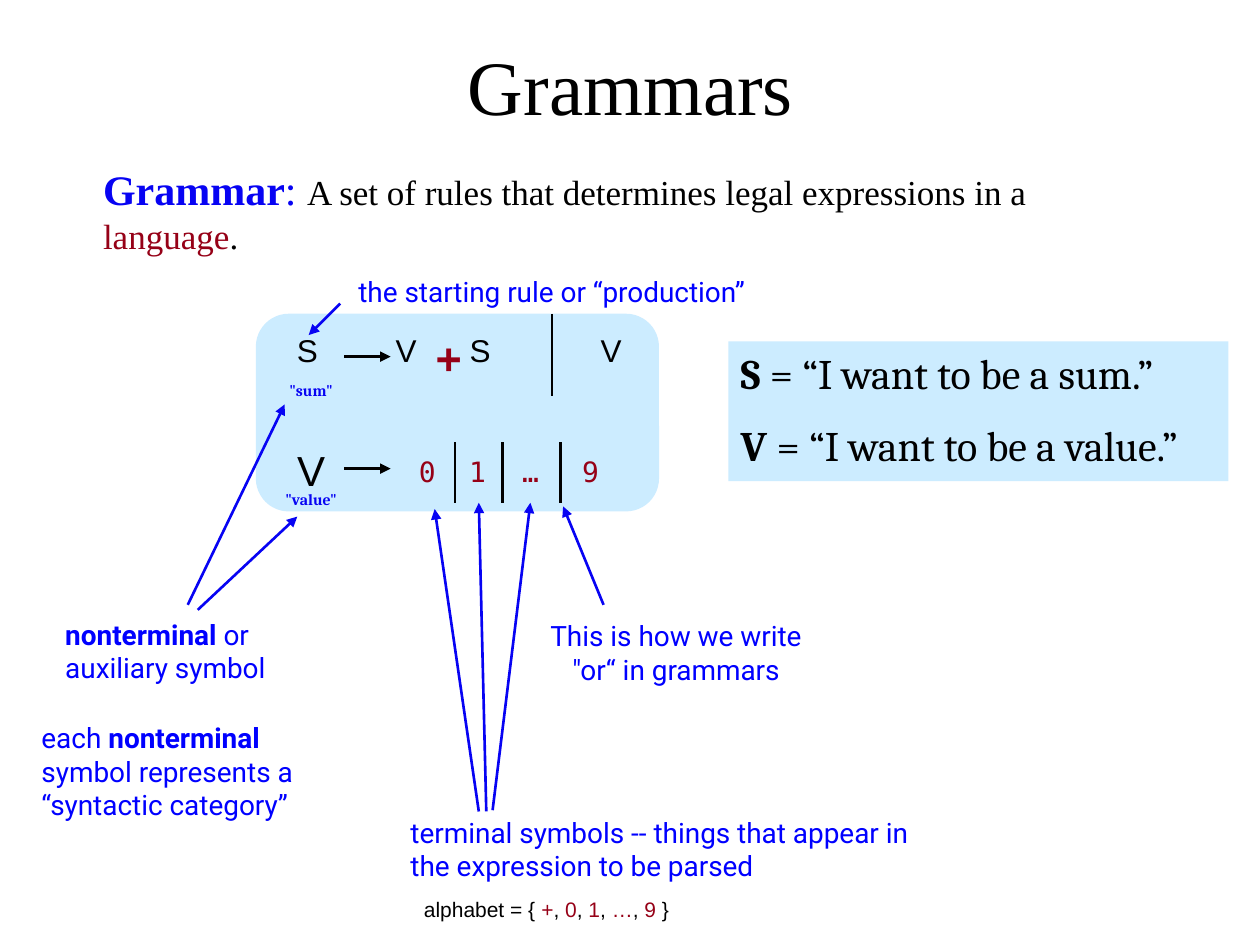
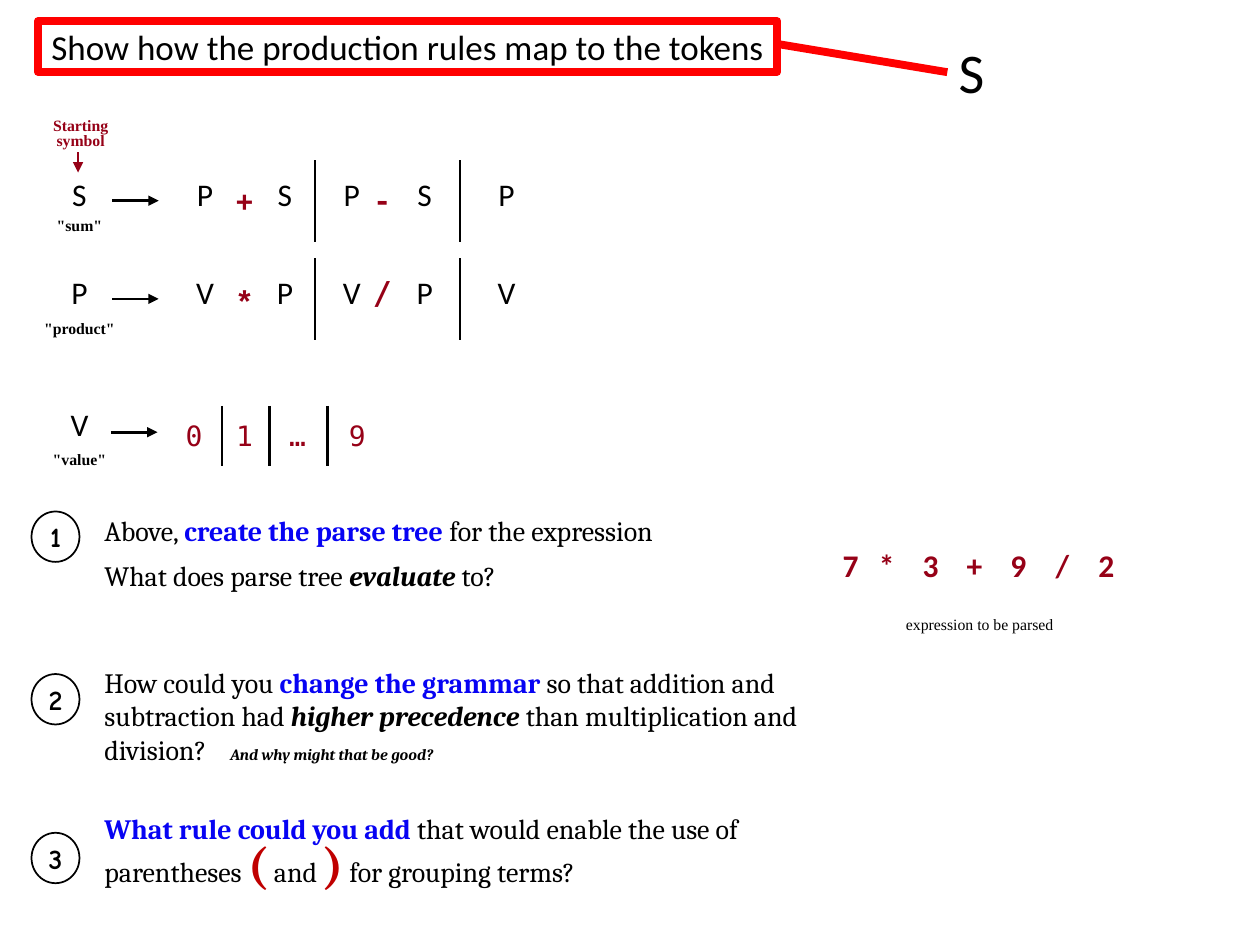
from lxml import etree
from pptx import Presentation
from pptx.dml.color import RGBColor
from pptx.enum import shapes, text
from pptx.oxml import ns
from pptx.util import Pt

COLORS = {"black": "000000", "white": "FFFFFF", "sky": "CCECFF", "label": "0000FF",
          "blue": "0703F3", "crimson": "960117", "brick": "C00000", "red": "FF0000"}
LEFT, CENTER = text.PP_ALIGN.LEFT, text.PP_ALIGN.CENTER


def style(font, size, color="black", **more):
    return {"font": font, "size": size, "color": color, "bold": False, "italic": False, **more}


TITLE = style("Times New Roman", 44)
DEFINITION = style("Times New Roman", 20)
NOTE = style("Roboto", 16, "label")
MEANING = style("Cambria", 24)
ALPHABET = style("Arial", 12)
LETTER = style("Arial", 18)
BIG_LETTER = style("Arial", 24)
PLUS = style("DejaVu Sans Mono", 24, "crimson", bold=True)
DIGIT = style("DejaVu Sans Mono", 16, "crimson")
CAPTION_BLUE = style("Cambria", 9, "blue", bold=True)
CAPTION = style("Times New Roman", 9, bold=True)
QUESTION = style("Cambria", 16)
NUMBER = style("Comic Neue", 16, bold=True)
SYMBOL = style("Calibri", 18)
EXPRESSION = style("Calibri", 18, "crimson", bold=True)
TASK = style("Calibri", 20)
ROOT = style("Calibri", 32)
MONO_16 = style("DejaVu Sans Mono", 16, "crimson", bold=True)
MONO_18 = {**MONO_16, "size": 18}
COURIER = style("Courier New", 18, "crimson", bold=True)

BOLD = {"bold": True}
STRESS = {"bold": True, "italic": True}
KEY = {"bold": True, "color": "blue"}
TERMINAL = {"color": "crimson"}
PAREN = {"size": 28, "color": "brick", "bold": True}

# The value rule, measured from the tail of its arrow
VALUES = [("0", 47.5), ("1", 76.3), ("…", 106.6), ("9", 140.8)]
VALUE_BARS = [63.4, 90.7, 123.8]
ARROW_LENGTH = 26.6

# Grammars slide: box, style, alignment, runs
GRAMMAR_TEXTS = [
    ((54, 18.7, 612.7, 59.8), TITLE, CENTER, ["Grammars"]),
    ((51.8, 90, 622.8, 58), DEFINITION, LEFT, [
        ("Grammar", {**KEY, "size": 24}), (": ", {"color": "blue", "size": 24}),
        "A set of rules that determines legal expressions in a ", ("language", TERMINAL), "."]),
    ((181.4, 153.4, 267.8, 26.6), NOTE, CENTER, ["the starting rule or “production”"]),
    ((30.2, 349.2, 136.1, 46), NOTE, LEFT, [("nonterminal", BOLD), " or auxiliary symbol"]),
    ((16.6, 408.2, 171.4, 65.5), NOTE, LEFT, [
        "each ", ("nonterminal", BOLD), " symbol represents a “syntactic category”"]),
    ((298.8, 349.9, 175, 46), NOTE, CENTER, ["This is how we write \"or“ in grammars"]),
    ((227.5, 462.2, 312.5, 46), NOTE, LEFT,
     ["terminal symbols -- things that appear in the expression to be parsed"]),
    ((231.8, 509, 164.2, 21.6), ALPHABET, CENTER, [
        "alphabet = { ", ("+", TERMINAL), ", ", ("0", TERMINAL), ", ", ("1", TERMINAL), ", ",
        ("…", TERMINAL), ", ", ("9", TERMINAL), " } "]),
]
GRAMMAR_TOKENS = [  # text, centre, top, style
    ("S", 175.7, 185.8, LETTER), ("V", 232, 185.8, LETTER), ("+", 256.4, 185.8, PLUS),
    ("S", 274.3, 185.8, LETTER), ("V", 349.2, 185.8, LETTER), ("V", 177.8, 250.6, BIG_LETTER),
]
GRAMMAR_CAPTIONS = [("\"sum\"", 216), ("\"value\"", 278.6)]
MEANINGS = [[("S", BOLD), " = “I want to be a sum.”"],
            [("V", BOLD), " = “I want to be a value.”"]]
POINTERS = [
    ((194.4, 173.5), (176.4, 191.5)),                                   # starting rule
    ((113, 348.5), (169.9, 295.2)), ((107.3, 345.6), (162.7, 231.1)),   # nonterminals
    ((273.6, 463.7), (248.4, 290.9)), ((277.9, 463.7), (273.6, 287.3)), # terminals
    ((281.5, 463), (303.1, 287.3)),
    ((344.9, 345.6), (321.8, 289.4)),                                   # "or"
]

# Parse tree slide
HEAD_X = 45.4
SYMBOL_XS = [HEAD_X, 117.2, 162.8, 201, 242.7, 289.4]
RULE_BARS = [180, 262.8]
OPERATOR_XS = [139.7, 218.5]
RULES = [  # symbols, operators (text, style, drop below the symbols), top
    ("SPSPSP", [("+", MONO_16, 5), ("-", COURIER, 2.9)], 96.5),
    ("PVPVPV", [("*", COURIER, 5), ("/", MONO_18, 0)], 152.6),
]
TREE_CAPTIONS = [("\"sum\"", 121.7), ("\"product\"", 180.7), ("\"value\"", 255.6)]
TOKENS = ["7", "*", "3", "+", "9", "/", "2"]
TOKEN_PITCH = 25.1
NUMBER_TOPS = [292.3, 385.2, 475.9]
QUESTIONS = [  # top, width, line spacing, runs
    (290.2, 374.4, None, ["Above, ", ("create the parse tree", KEY), " for the expression"]),
    (315.4, 277.2, None, ["What does parse tree ", ("evaluate", STRESS), " to?"]),
    (376.6, 410.4, None, [
        "How could you ", ("change the grammar ", KEY), "so that addition and subtraction had ",
        ("higher precedence ", STRESS), "than multiplication and division?\t",
        ("And why might that be good?", {**STRESS, "size": 9})]),
    (463.7, 385.2, 0.8, [
        ("What rule could you add ", KEY), "that would enable the use of parentheses ",
        ("(", PAREN), " and ", (")", PAREN), " for grouping terms?"]),
]


def rgb(name):
    return RGBColor.from_string(COLORS[name])


def fill_paragraph(paragraph, runs, base, align=LEFT, spacing=None, tabs=(), tab_align="l"):
    paragraph.alignment = align
    if spacing:
        paragraph.line_spacing = spacing
    for item in runs:
        words, change = (item, {}) if isinstance(item, str) else item
        look = {**base, **change}
        run = paragraph.add_run()
        run.text = words
        run.font.name, run.font.size = look["font"], Pt(look["size"])
        run.font.bold, run.font.italic = look["bold"], look["italic"]
        run.font.color.rgb = rgb(look["color"])
    if tabs:
        stops = etree.SubElement(paragraph._p.get_or_add_pPr(), ns.qn("a:tabLst"))
        for position in tabs:
            etree.SubElement(stops, ns.qn("a:tab"), pos=str(int(Pt(position))), algn=tab_align)


def write(slide, box, base, align, runs, **layout):
    frame = slide.shapes.add_textbox(*map(Pt, box)).text_frame
    frame.word_wrap = True
    fill_paragraph(frame.paragraphs[0], runs, base, align, **layout)


def token(slide, symbol, center, top, base):
    write(slide, (center - 20, top, 40, 28), base, CENTER, [symbol])


def caption(slide, words, center, top, base, width=60.5):
    write(slide, (center - width / 2, top, width, 16), base, CENTER, [words], spacing=0.8)


def draw_line(slide, start, end, color="black", width=1.5, arrow=False):
    connector = slide.shapes.add_connector(
        shapes.MSO_CONNECTOR.STRAIGHT, *map(Pt, (*start, *end)))
    connector.line.color.rgb = rgb(color)
    connector.line.width = Pt(width)
    properties = connector.element.spPr
    if arrow:
        etree.SubElement(properties.find(ns.qn("a:ln")), ns.qn("a:tailEnd"), type="triangle")
    etree.SubElement(properties, ns.qn("a:effectLst"))


def rule_arrow(slide, x, y):
    draw_line(slide, (x, y), (x + ARROW_LENGTH, y), arrow=True)


def bars(slide, xs, top, height):
    for x in xs:
        draw_line(slide, (x, top), (x, top + height))


def value_rule(slide, x, y):
    """Draw the arrow, digits and bars that both slides use for V."""
    rule_arrow(slide, x, y)
    for symbol, offset in VALUES:
        token(slide, symbol, x + offset, y - 11.5, DIGIT)
    bars(slide, [x + offset for offset in VALUE_BARS], y - 15.1, 34.5)


def panel(slide, kind, box, fill=None, line=None, width=1):
    shape = slide.shapes.add_shape(kind, *map(Pt, box))
    shape.shadow.inherit = False
    if fill:
        shape.fill.solid()
        shape.fill.fore_color.rgb = rgb(fill)
    else:
        shape.fill.background()
    if line:
        shape.line.color.rgb = rgb(line)
        shape.line.width = Pt(width)
    else:
        shape.line.fill.background()
    return shape


def build_grammars(slide):
    panel(slide, shapes.MSO_SHAPE.ROUNDED_RECTANGLE, (146.2, 179.3, 230.4, 113), "sky")
    meanings = panel(slide, shapes.MSO_SHAPE.RECTANGLE, (416.2, 195.1, 285.8, 79.9), "sky")
    frame = meanings.text_frame
    frame.vertical_anchor = text.MSO_ANCHOR.TOP
    for i, runs in enumerate(MEANINGS):
        paragraph = frame.add_paragraph() if i else frame.paragraphs[0]
        fill_paragraph(paragraph, runs, MEANING)
        if i:
            paragraph.space_before = Pt(12)
    for entry in GRAMMAR_TEXTS:
        write(slide, *entry)
    for entry in GRAMMAR_TOKENS:
        token(slide, *entry)
    for words, top in GRAMMAR_CAPTIONS:
        caption(slide, words, 177.8, top, CAPTION_BLUE)
    rule_arrow(slide, 196.6, 203.8)
    bars(slide, [315.4], 179.3, 46.8)
    value_rule(slide, 196.6, 267.8)
    for start, end in POINTERS:
        draw_line(slide, start, end, "blue", arrow=True)


def build_parse_tree(slide):
    for symbols, operators, top in RULES:
        for symbol, x in zip(symbols, SYMBOL_XS):
            token(slide, symbol, x, top, SYMBOL)
        for (operator, base, drop), x in zip(operators, OPERATOR_XS):
            token(slide, operator, x, top + drop, base)
        rule_arrow(slide, 64.1, top + 18.2)
        bars(slide, RULE_BARS, top - 5, 46.8)
    token(slide, "V", HEAD_X, 228.2, SYMBOL)
    value_rule(slide, 63.4, 247)
    for words, top in TREE_CAPTIONS:
        caption(slide, words, HEAD_X, top, CAPTION)
    caption(slide, "Starting symbol", 46.1, 64.8, {**CAPTION, **TERMINAL})
    draw_line(slide, (44.6, 87.1), (44.6, 98.6), "crimson", 0.75, arrow=True)

    for top, width, spacing, runs in QUESTIONS:
        write(slide, (52.6, top, width, 50), QUESTION, LEFT, runs, spacing=spacing, tabs=[72])
    for number, top in enumerate(NUMBER_TOPS, 1):
        circle = panel(slide, shapes.MSO_SHAPE.OVAL, (18, top, 27.4, 28.8), line="black")
        frame = circle.text_frame
        frame.margin_left = frame.margin_right = 0
        frame.vertical_anchor = text.MSO_ANCHOR.MIDDLE
        fill_paragraph(frame.paragraphs[0], [str(number)], NUMBER, CENTER)

    write(slide, (474.5, 308.2, 180, 36.7), EXPRESSION, LEFT, ["\t".join(TOKENS)],
          tabs=[TOKEN_PITCH * i for i in range(1, len(TOKENS))], tab_align="ctr")
    caption(slide, "expression to be parsed", 559.8, 349.9, {**CAPTION, "bold": False}, 126)
    token(slide, "S", 555.1, 18, ROOT)

    task = panel(slide, shapes.MSO_SHAPE.LINE_CALLOUT_1, (21.6, 12.2, 422.6, 28.8),
                 "white", "red", 4.5)
    for i, value in enumerate((1.01, 1.23, 0.45, 1)):
        task.adjustments[i] = value
    task.text_frame.vertical_anchor = text.MSO_ANCHOR.MIDDLE
    fill_paragraph(task.text_frame.paragraphs[0],
                   ["Show how the production rules map to the tokens"], TASK, CENTER)


def main():
    deck = Presentation()
    deck.slide_width, deck.slide_height = Pt(720), Pt(540)
    for build in (build_grammars, build_parse_tree):
        build(deck.slides.add_slide(deck.slide_layouts[6]))
    deck.save("out.pptx")


if __name__ == "__main__":
    main()
